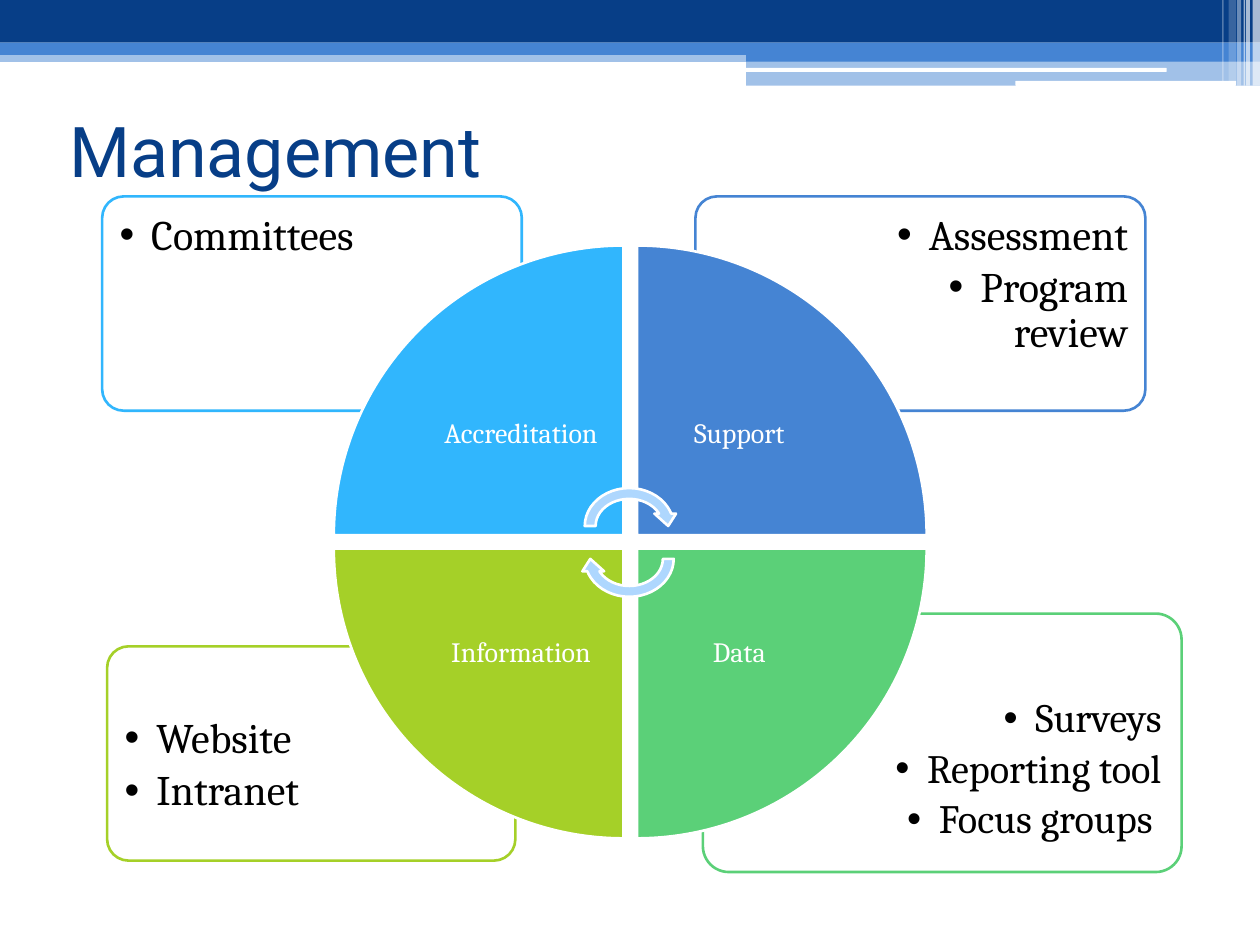
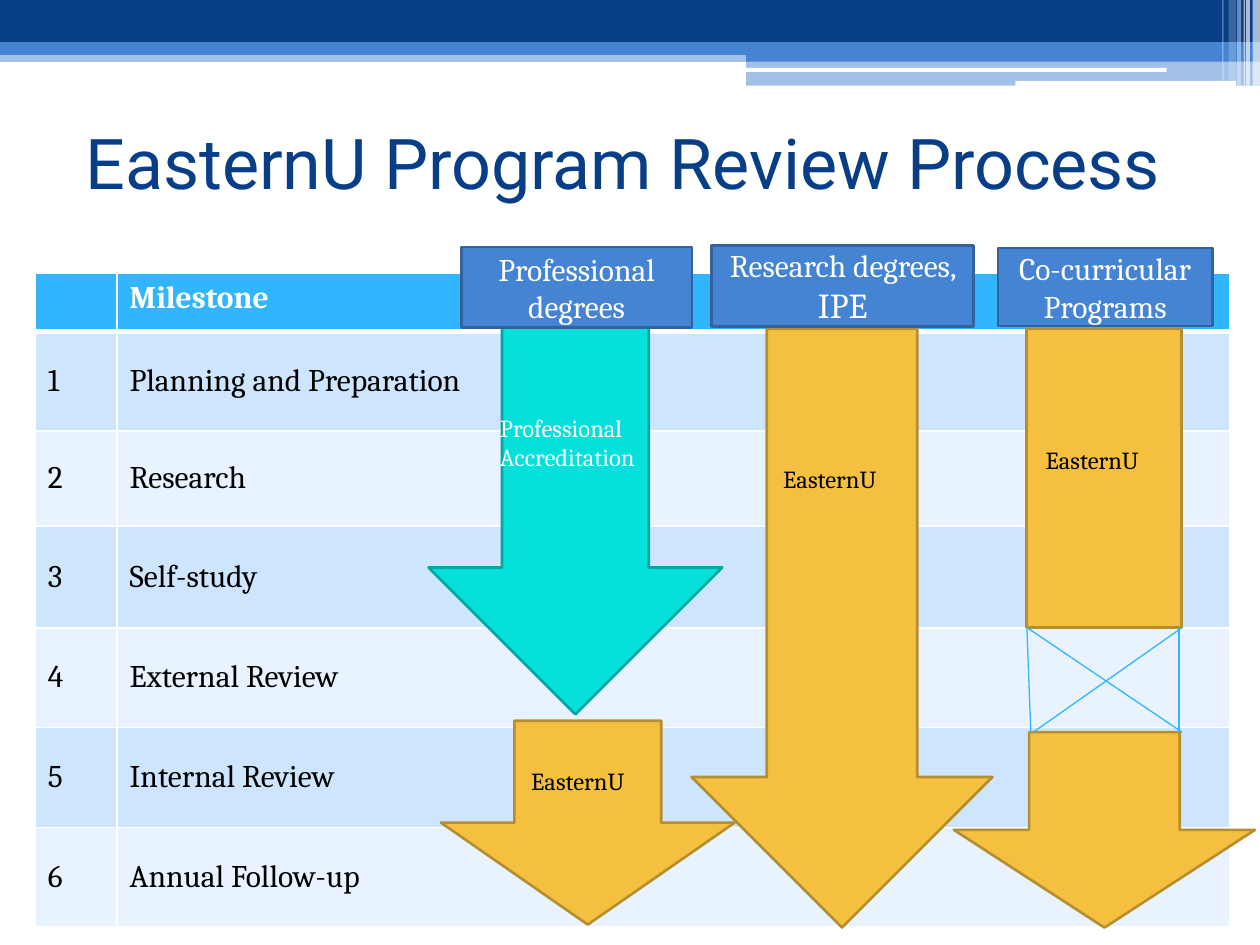
from dataclasses import dataclass
from math import sqrt

from lxml import etree
from pptx import Presentation
from pptx.dml.color import RGBColor
from pptx.enum.shapes import MSO_CONNECTOR, MSO_SHAPE
from pptx.enum.text import MSO_ANCHOR, MSO_AUTO_SIZE, PP_ALIGN
from pptx.oxml.ns import qn
from pptx.util import Cm, Pt

RECT, ROUNDED = MSO_SHAPE.RECTANGLE, MSO_SHAPE.ROUNDED_RECTANGLE
WEDGE, CYCLE, DOWN = MSO_SHAPE.PIE_WEDGE, MSO_SHAPE.CIRCULAR_ARROW, MSO_SHAPE.DOWN_ARROW
STRAIGHT = MSO_CONNECTOR.STRAIGHT
LEFT, CENTER, RIGHT = PP_ALIGN.LEFT, PP_ALIGN.CENTER, PP_ALIGN.RIGHT
TOP, MIDDLE = MSO_ANCHOR.TOP, MSO_ANCHOR.MIDDLE
NO_AUTOFIT = MSO_AUTO_SIZE.NONE


@dataclass(frozen=True)
class Theme:
    navy: str = "073E87"
    blue: str = "4584D3"
    blue_edge: str = "33629C"
    sky: str = "31B6FD"
    lime: str = "A5D028"
    green: str = "5BD078"
    pale: str = "AED7FE"
    teal: str = "05E0DB"
    teal_edge: str = "04A6A2"
    gold: str = "F5C040"
    gold_edge: str = "B58E2F"
    row_dark: str = "CEE5FE"
    row_light: str = "E8F3FF"
    white: str = "FFFFFF"
    black: str = "000000"
    heading_font: str = "Roboto"
    body_font: str = "Cambria"
    title: int = 40
    bullet: int = 24
    bullet_small: int = 23
    table: int = 18
    wedge: int = 16
    label: int = 14
    edge: float = 1.5
    hairline: float = 0.75


T = Theme()

BANDS = [
    (RECT, (0, 1.02, 25.4, 0.23), T.blue, 50),
    (RECT, (0, 0, 25.4, 0.86), T.navy, 100),
    (RECT, (0, 0.86, 25.4, 0.25), T.blue, 100),
    (RECT, (15.04, 0.99, 10.36, 0.25), T.blue, 100),
    (RECT, (15.04, 1.22, 10.36, 0.51), T.blue, 50),
    (ROUNDED, (15.01, 1.37, 8.51, 0.08), T.white, 100),
    (ROUNDED, (20.47, 1.63, 4.45, 0.1), T.white, 100),
]
STRIPES = [
    (25.25, 0.15, 1.73, 65), (25.12, 0.08, 1.73, 65), (25.07, 0.03, 1.73, 60),
    (24.94, 0.08, 1.73, 40), (24.77, 0.15, 1.63, 20), (24.64, 0.03, 1.63, 30),
]

# Quadrants run clockwise from the upper left.
QUADRANTS = [
    ("Accreditation", T.sky, (2.06, 3.96, 8.46, 4.32), T.bullet, ["Committees"]),
    ("Support", T.blue, (14.02, 3.96, 9.07, 4.32), T.bullet, ["Assessment", "Program review"]),
    ("Data", T.green, (14.17, 12.37, 9.65, 5.21), T.bullet_small,
     ["Surveys", "Reporting tool", "Focus groups "]),
    ("Information", T.lime, (2.16, 13.03, 8.23, 4.32), T.bullet, ["Website", "Intranet"]),
]
WHEEL_LEFT, WHEEL_TOP, WEDGE_SIZE, WEDGE_STEP = 6.73, 4.95, 5.84, 6.11
CYCLE_ARROWS = [(9.73, 0), (10.39, 180)]

MILESTONES = ["Planning and Preparation", "Research", "Self-study",
              "External Review", "Internal Review", "Annual Follow-up"]
COLUMN_WIDTHS = [1.65, 22.43]
ROW_HEIGHTS = [1.17, 2.01, 1.91, 2.06, 2.01, 2.01, 2.01]
TRACKS = [
    (DOWN, (8.64, 6.53, 5.92, 7.87), T.teal, T.teal_edge),
    (DOWN, (13.94, 6.63, 6.07, 12.07), T.gold, T.gold_edge),
    (DOWN, (8.89, 14.53, 5.92, 4.11), T.gold, T.gold_edge),
    (RECT, (20.7, 6.63, 3.12, 6.02), T.gold, T.gold_edge),
    (DOWN, (19.23, 14.76, 6.07, 3.94), T.gold, T.gold_edge),
]
TRACK_HEADS = [
    ((9.3, 4.98, 4.65, 1.63), [("Professional degrees", 18)]),
    ((14.35, 4.95, 5.28, 1.63), [("Research degrees, ", 18), ("IPE", 20)]),
    ((20.12, 5, 4.32, 1.57), [("Co-curricular Programs", 18)]),
]
REVIEWER = "EasternU"
TRACK_LABELS = [
    ((10.46, 15.32, 2.77, 0.86), REVIEWER, T.black),
    ((15.54, 9.22, 2.9, 0.86), REVIEWER, T.black),
    ((9.83, 8.2, 3.56, 1.45), "Professional Accreditation", T.white),
    ((20.83, 8.84, 2.9, 0.86), REVIEWER, T.black),
]
SKIPPED_TOP, SKIPPED_BOTTOM = 12.65, 14.76
SKIPPED_LINES = [(23.83, 20.83), (20.7, 23.83), (20.7, 20.78), (23.77, 23.77)]


def rgb(color):
    return RGBColor.from_string(color)


def cm(values):
    return [Cm(value) for value in values]


def add_block(slide, kind, box, fill, edge=None, opacity=100):
    block = slide.shapes.add_shape(kind, *cm(box))
    block.shadow.inherit = False
    block.fill.solid()
    block.fill.fore_color.rgb = rgb(fill)
    if opacity < 100:
        color = block.fill._xPr.find(".//" + qn("a:srgbClr"))
        etree.SubElement(color, qn("a:alpha"), val=str(opacity * 1000))
    if edge:
        block.line.color.rgb = rgb(edge)
        block.line.width = Pt(T.edge)
    else:
        block.line.fill.background()
    return block


def style_run(run, size, color, font=T.body_font, bold=False):
    run.font.size = Pt(size)
    run.font.name = font
    run.font.bold = bold
    run.font.color.rgb = rgb(color)


def style_paragraph(paragraph, size, color, align=LEFT):
    paragraph.alignment = align
    for run in paragraph.runs:
        style_run(run, size, color)


def add_text(slide, box, lines, size, color, align=LEFT, anchor=TOP, inset=None):
    frame = slide.shapes.add_textbox(*cm(box)).text_frame
    frame.word_wrap = True
    frame.vertical_anchor = anchor
    if inset is not None:
        frame.margin_left = frame.margin_right = Cm(inset)
        frame.margin_top = frame.margin_bottom = Cm(inset)
    frame.text = "\n".join(lines)
    for paragraph in frame.paragraphs:
        style_paragraph(paragraph, size, color, align)
    return frame


def add_bullet(paragraph):
    paragraph.line_spacing = 0.9
    paragraph.space_after = Pt(4)
    properties = paragraph._p.get_or_add_pPr()
    properties.set("marL", str(Cm(0.64)))
    properties.set("indent", str(-Cm(0.64)))
    etree.SubElement(properties, qn("a:buFont"), typeface="Arial")
    etree.SubElement(properties, qn("a:buChar"), char="•")


def add_titled_slide(deck, layout, title, box):
    slide = deck.slides.add_slide(layout)
    heading = slide.shapes.title
    heading.left, heading.top, heading.width, heading.height = cm(box)
    frame = heading.text_frame
    frame.text = title
    frame.auto_size = NO_AUTOFIT
    frame.vertical_anchor = MIDDLE
    frame.paragraphs[0].alignment = LEFT
    style_run(frame.paragraphs[0].runs[0], T.title, T.navy, T.heading_font)
    return slide


def move_bands_to_layout(slide, layout):
    stripes = [(RECT, (left, 0, width, height), T.white, opacity)
               for left, width, height, opacity in STRIPES]
    for position, (kind, box, fill, opacity) in enumerate(BANDS + stripes):
        band = add_block(slide, kind, box, fill, opacity=opacity)
        layout.shapes.element.insert(2 + position, band.element)


def add_card(slide, box, color, size, bullets, on_right, on_bottom):
    left, top, width, height = box
    card = add_block(slide, ROUNDED, box, T.white, color, 90)
    card.adjustments[0] = 0.1
    text_width, text_height = 0.7 * width - 0.2, 0.75 * height - 0.2
    text_left = left + width - text_width - 0.1 if on_right else left + 0.1
    text_top = top + height - text_height - 0.1 if on_bottom else top + 0.1
    frame = add_text(slide, (text_left, text_top, text_width, text_height), bullets, size,
                     T.black, RIGHT if on_right else LEFT, inset=0.3 if on_bottom and on_right else 0.25)
    for paragraph in frame.paragraphs:
        add_bullet(paragraph)


def add_wedge(slide, name, color, turn, on_right, on_bottom):
    left = WHEEL_LEFT + on_right * WEDGE_STEP
    top = WHEEL_TOP + on_bottom * WEDGE_STEP
    wedge = add_block(slide, WEDGE, (left, top, WEDGE_SIZE, WEDGE_SIZE), color, T.white)
    wedge.rotation = turn
    side = WEDGE_SIZE / sqrt(2)
    name_left = left if on_right else left + WEDGE_SIZE - side
    name_top = top if on_bottom else top + WEDGE_SIZE - side
    add_text(slide, (name_left, name_top, side, side), [name], T.wedge, T.white,
             CENTER, MIDDLE, 0.3)


def build_management(slide):
    placed = [(quadrant, index * 90, index in (1, 2), index in (2, 3))
              for index, quadrant in enumerate(QUADRANTS)]
    for (name, color, box, size, bullets), turn, on_right, on_bottom in reversed(placed):
        add_card(slide, box, color, size, bullets, on_right, on_bottom)
    for (name, color, *card), turn, on_right, on_bottom in placed:
        add_wedge(slide, name, color, turn, on_right, on_bottom)
    for top, turn in CYCLE_ARROWS:
        add_block(slide, CYCLE, (11.68, top, 2.01, 1.75), T.pale, T.white).rotation = turn


def set_borders(cell, top, bottom):
    properties = cell._tc.get_or_add_tcPr()
    for position, (side, width) in enumerate(
            [("lnL", 1), ("lnR", 1), ("lnT", top), ("lnB", bottom)]):
        border = etree.Element(qn("a:" + side), w=str(Pt(width)))
        fill = etree.SubElement(border, qn("a:solidFill"))
        etree.SubElement(fill, qn("a:srgbClr"), val=T.white)
        properties.insert(position, border)


def add_milestones(slide):
    rows = [("", "Milestone")] + [(str(n), name) for n, name in enumerate(MILESTONES, 1)]
    size = (sum(COLUMN_WIDTHS), sum(ROW_HEIGHTS))
    table = slide.shapes.add_table(len(rows), 2, *cm((0.71, 5.51) + size)).table
    for column, width in zip(table.columns, COLUMN_WIDTHS):
        column.width = Cm(width)
    for index, (row, height, texts) in enumerate(zip(table.rows, ROW_HEIGHTS, rows)):
        row.height = Cm(height)
        header = index == 0
        fill = T.sky if header else T.row_dark if index % 2 else T.row_light
        for cell, text in zip(row.cells, texts):
            cell.text = text
            cell.vertical_anchor = TOP if header else MIDDLE
            cell.fill.solid()
            cell.fill.fore_color.rgb = rgb(fill)
            set_borders(cell, 3 if index == 1 else 1, 3 if header else 1)
            for run in cell.text_frame.paragraphs[0].runs:
                style_run(run, T.table, T.white if header else T.black, bold=header)


def add_track_head(slide, box, parts):
    frame = add_block(slide, RECT, box, T.blue, T.blue_edge).text_frame
    frame.word_wrap = True
    frame.vertical_anchor = MIDDLE
    paragraph = frame.paragraphs[0]
    paragraph.alignment = CENTER
    for text, size in parts:
        run = paragraph.add_run()
        run.text = text
        style_run(run, size, T.white)


def build_review_process(slide):
    add_milestones(slide)
    for track in TRACKS:
        add_block(slide, *track)
    for box, parts in TRACK_HEADS:
        add_track_head(slide, box, parts)
    for box, text, color in TRACK_LABELS:
        add_text(slide, box, [text], T.label, color)
    for start, end in SKIPPED_LINES:
        line = slide.shapes.add_connector(
            STRAIGHT, *cm((start, SKIPPED_TOP, end, SKIPPED_BOTTOM)))
        line.line.color.rgb = rgb(T.sky)
        line.line.width = Pt(T.hairline)
        etree.SubElement(line.element.spPr, qn("a:effectLst"))


def main():
    deck = Presentation()
    deck.slide_width, deck.slide_height = Cm(25.4), Cm(19.05)
    layout = deck.slide_layouts[5]
    management = add_titled_slide(deck, layout, "Management", (1.14, 1.52, 22.86, 2.97))
    move_bands_to_layout(management, layout)
    build_management(management)
    review = add_titled_slide(deck, layout, f"{REVIEWER} Program Review Process",
                              (1.47, 1.78, 22.86, 2.97))
    build_review_process(review)
    deck.save("out.pptx")


if __name__ == "__main__":
    main()
